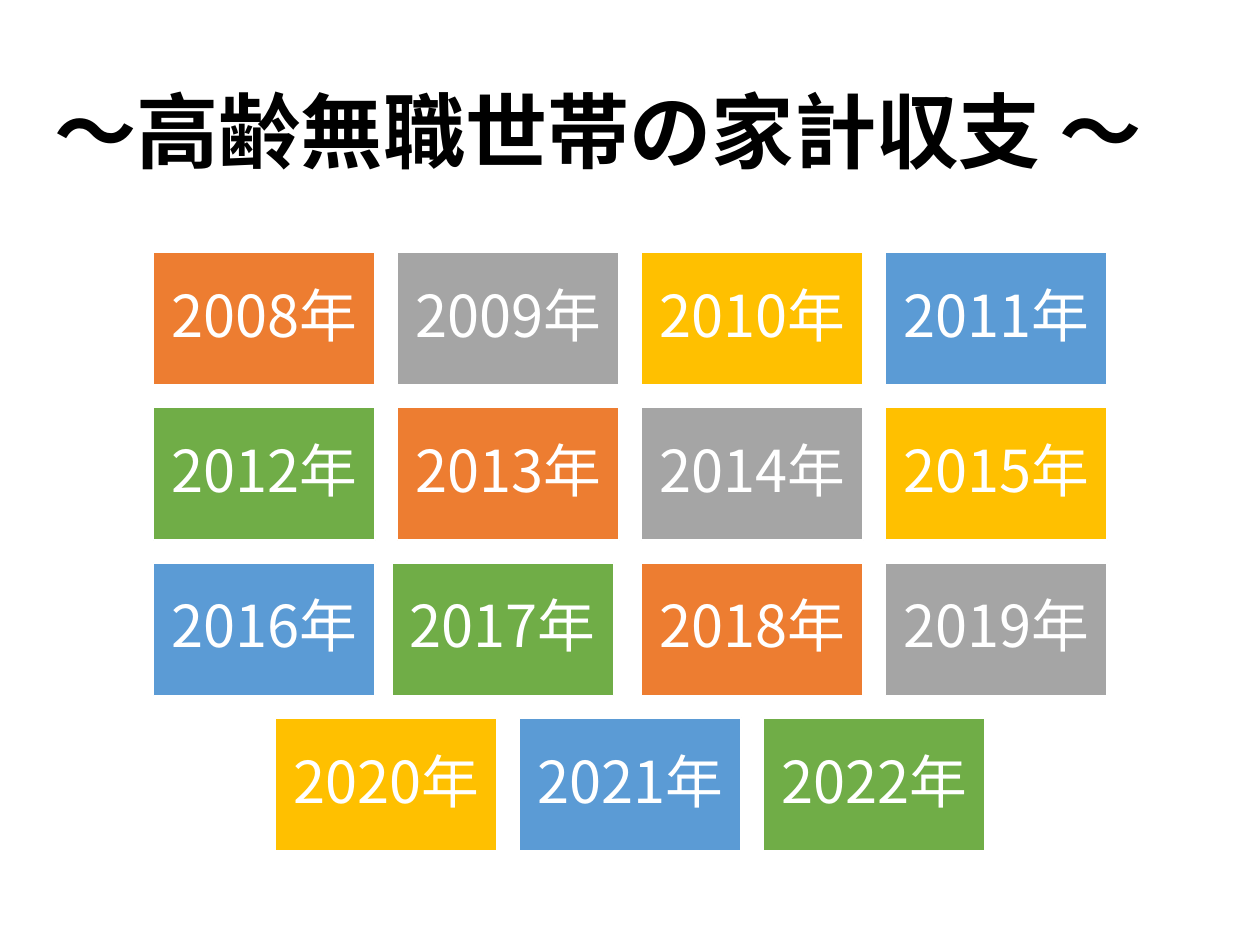
import pptx
import pptx.util
import pptx.dml.color
import pptx.enum.shapes
import pptx.enum.text
import pptx.oxml.ns
import lxml.etree
from dataclasses import dataclass

Pt = pptx.util.Pt
Align = pptx.enum.text.PP_ALIGN


@dataclass(frozen=True)
class Theme:
    font: str = "Noto Sans CJK JP"
    ink: str = "000000"
    paper: str = "FFFFFF"
    tiles: tuple = ("ED7D31", "A5A5A5", "FFC000", "5B9BD5", "70AD47")
    head: float = 47
    body: float = 33
    lead: float = 0.9


def tint(code):
    return pptx.dml.color.RGBColor.from_string(code)


class Deck:
    def __init__(self, theme):
        self.theme = theme
        self.prs = pptx.Presentation()
        self.prs.slide_width, self.prs.slide_height = Pt(720), Pt(540)
        self.slide = self.prs.slides.add_slide(self.prs.slide_layouts[6])

    def label(self, frame, text, size, color, align, bold=False):
        """Fill a frame with one wrapped, vertically centred paragraph."""
        frame.text = text
        frame.word_wrap = True
        frame.vertical_anchor = pptx.enum.text.MSO_ANCHOR.MIDDLE
        para = frame.paragraphs[0]
        para.alignment = align
        para.line_spacing = self.theme.lead
        font = para.runs[0].font
        font.name, font.size, font.bold = self.theme.font, Pt(size), bold
        font.color.rgb = tint(color)
        # Japanese glyphs take their face from a:ea
        east = lxml.etree.SubElement(para.runs[0]._r.rPr, pptx.oxml.ns.qn("a:ea"))
        east.set("typeface", self.theme.font)

    def title(self, text, *box):
        shape = self.slide.shapes.add_textbox(*map(Pt, box))
        self.label(shape.text_frame, text, self.theme.head, self.theme.ink,
                   Align.LEFT, True)

    def tile(self, text, fill, *box):
        shape = self.slide.shapes.add_shape(
            pptx.enum.shapes.MSO_SHAPE.RECTANGLE, *map(Pt, box))
        shape.shadow.inherit = False
        shape.fill.solid()
        shape.fill.fore_color.rgb = tint(fill)
        shape.line.color.rgb = tint(self.theme.paper)
        shape.line.width = Pt(1)
        frame = shape.text_frame
        frame.margin_left = frame.margin_right = Pt(9.9)
        frame.margin_top = frame.margin_bottom = Pt(9.9)
        self.label(frame, text, self.theme.body, self.theme.paper, Align.CENTER)


def main():
    theme = Theme()
    deck = Deck(theme)
    deck.title("～高齢無職世帯の家計収支 ～", 23.8, 25.2, 673.9, 104.4)

    years = range(2008, 2023)
    cols, wide, high = 4, 126.7, 76
    left, top, step, drop = 87.7, 144, 139.45, 88.75
    nudge = {2017: -3.2}
    for i, year in enumerate(years):
        row, col = divmod(i, cols)
        count = min(cols, len(years) - row * cols)
        start = left + (cols - count) * step / 2  # centre a short row
        deck.tile(f"{year}年", theme.tiles[i % len(theme.tiles)],
                  start + col * step + nudge.get(year, 0),
                  top + row * drop, wide, high)

    deck.prs.save("out.pptx")


if __name__ == "__main__":
    main()
